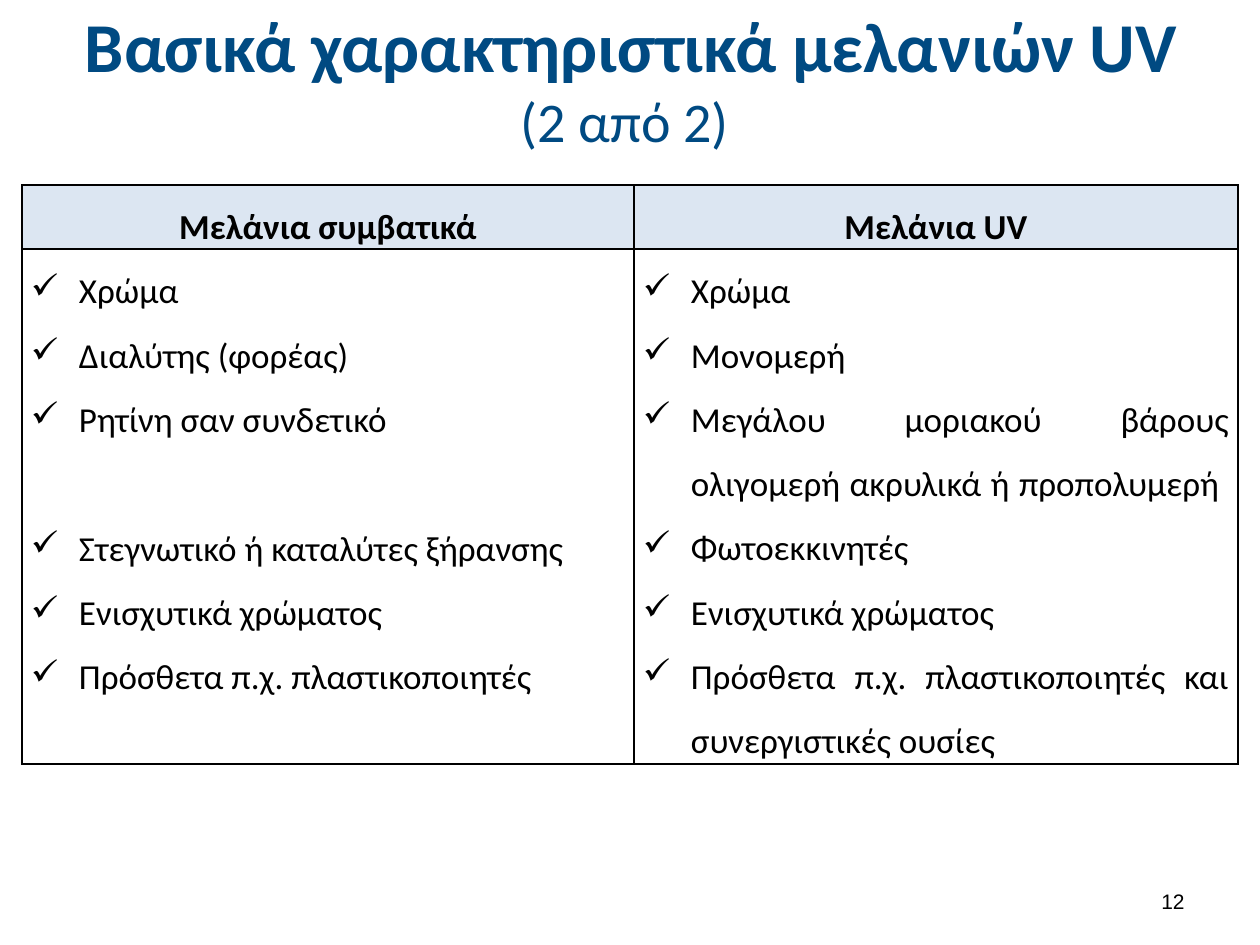
import pptx
import pptx.dml.color
import pptx.enum.text
import pptx.oxml
import pptx.oxml.ns
import pptx.util

PX = 914400 // 126
NAVY = pptx.dml.color.RGBColor(0x00, 0x4A, 0x82)
BLACK = pptx.dml.color.RGBColor(0x00, 0x00, 0x00)
PALE_BLUE = pptx.dml.color.RGBColor(0xDC, 0xE6, 0xF2)
ALIGN = pptx.enum.text.PP_ALIGN
MIDDLE = pptx.enum.text.MSO_ANCHOR.MIDDLE
LINE_HEIGHT = pptx.util.Pt(37)


def add_run(paragraph, text, color, **font_values):
    run = paragraph.add_run()
    run.text = text
    run.font.color.rgb = color
    for name, value in font_values.items():
        setattr(run.font, name, value)


def add_xml(parent, xml):
    tag, rest = xml.split(" ", 1)
    namespace = pptx.oxml.ns.nsdecls("a")
    parent.append(pptx.oxml.parse_xml(f"<{tag} {namespace} {rest}"))


deck = pptx.Presentation()
deck.slide_width = 1260 * PX
deck.slide_height = 945 * PX
slide = deck.slides.add_slide(deck.slide_layouts[6])

# Title and page number
heading = slide.shapes.add_textbox(64 * PX, 16 * PX, 1134 * PX, 125 * PX).text_frame
page_number = slide.shapes.add_textbox(903 * PX, 876 * PX, 294 * PX, 50 * PX).text_frame
for frame, alignment in ((heading, ALIGN.CENTER), (page_number, ALIGN.RIGHT)):
    frame.word_wrap = True
    frame.vertical_anchor = MIDDLE
    frame.paragraphs[0].alignment = alignment
title_line = heading.paragraphs[0]
add_run(title_line, "Βασικά χαρακτηριστικά μελανιών UV ", NAVY,
        name="Calibri", size=pptx.util.Pt(40), bold=True)
add_run(title_line, "(2 από 2) ", NAVY,
        name="Calibri", size=pptx.util.Pt(32), bold=False)
add_run(page_number.paragraphs[0], "12", BLACK,
        name="Arial", size=pptx.util.Pt(12))

# Ink comparison: heading, ingredients, ingredient that starts one line lower
inks = [
    ("Μελάνια συμβατικά",
     ["Χρώμα ", "Διαλύτης (φορέας)", "Ρητίνη σαν συνδετικό",
      "Στεγνωτικό ή καταλύτες ξήρανσης", "Ενισχυτικά χρώματος",
      "Πρόσθετα π.χ. πλαστικοποιητές "], 3),
    ("Μελάνια UV",
     ["Χρώμα ", "Μονομερή ",
      "Μεγάλου μοριακού βάρους ολιγομερή ακρυλικά ή προπολυμερή  ",
      "Φωτοεκκινητές ", "Ενισχυτικά χρώματος ",
      "Πρόσθετα π.χ. πλαστικοποιητές και συνεργιστικές ουσίες "], None),
]
comparison = slide.shapes.add_table(2, 2, 22 * PX, 185 * PX, 1216 * PX, 579 * PX).table
for column, width in zip(comparison.columns, (612, 604)):
    column.width = width * PX
for row, height in zip(comparison.rows, (64, 515)):
    row.height = height * PX

cell_format = {"margin_left": 9 * PX, "margin_right": 9 * PX,
               "margin_top": 0, "margin_bottom": 0}
for column_index, (ink, ingredients, lowered) in enumerate(inks):
    for row_index, lines in enumerate(([ink], ingredients)):
        is_header = row_index == 0
        cell = comparison.cell(row_index, column_index)
        for name, value in cell_format.items():
            setattr(cell, name, value)

        # Borders come before the fill in the cell properties
        properties = cell._tc.get_or_add_tcPr()
        for side in "LRTB":
            add_xml(properties, f'a:ln{side} w="12700"><a:solidFill>'
                    f'<a:srgbClr val="{BLACK}"/></a:solidFill></a:ln{side}>')
        if is_header:
            cell.fill.solid()
            cell.fill.fore_color.rgb = PALE_BLUE
        else:
            cell.fill.background()

        # Centred heading or justified check list
        for line_index, text in enumerate(lines):
            frame = cell.text_frame
            paragraph = frame.add_paragraph() if line_index else frame.paragraphs[0]
            paragraph.line_spacing = 1.5
            paragraph.alignment = ALIGN.CENTER if is_header else ALIGN.JUSTIFY
            if not is_header:
                if line_index == lowered:
                    paragraph.space_before = LINE_HEIGHT
                indent = paragraph._p.get_or_add_pPr()
                indent.set("marL", str(48 * PX))
                indent.set("indent", str(-48 * PX))
                add_xml(indent, 'a:buChar char="✓"/>')
            add_run(paragraph, text, BLACK, name="Calibri",
                    size=pptx.util.Pt(20), bold=is_header)

deck.save("out.pptx")
